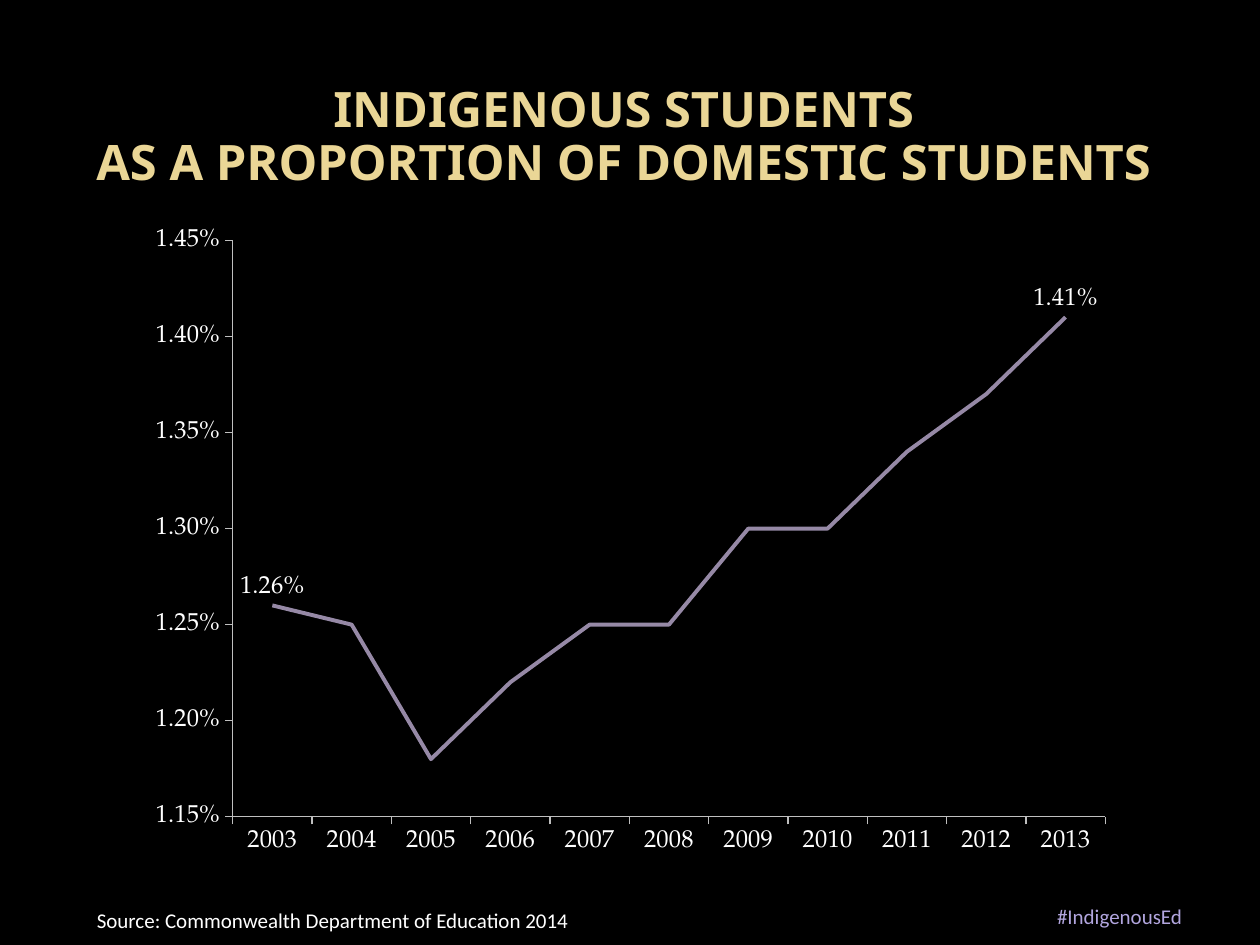
from dataclasses import dataclass

from lxml import etree
from pptx import Presentation
from pptx.chart.data import CategoryChartData
from pptx.dml.color import RGBColor
from pptx.enum.chart import XL_CHART_TYPE, XL_LABEL_POSITION, XL_TICK_MARK
from pptx.enum.text import MSO_ANCHOR, PP_ALIGN
from pptx.oxml.ns import qn
from pptx.util import Inches, Pt

LINE = XL_CHART_TYPE.LINE
ABOVE = XL_LABEL_POSITION.ABOVE
OUTSIDE = XL_TICK_MARK.OUTSIDE
TOP, MIDDLE = MSO_ANCHOR.TOP, MSO_ANCHOR.MIDDLE
LEFT, CENTER, RIGHT = PP_ALIGN.LEFT, PP_ALIGN.CENTER, PP_ALIGN.RIGHT


@dataclass(frozen=True)
class Theme:
    background: str = "000000"
    title: str = "EAD696"
    text: str = "FFFFFF"
    tag: str = "B2A6DF"
    series: str = "9689A6"
    axis: str = "BFBFBF"
    title_font: str = "Noto Sans"
    body_font: str = "Calibri"
    chart_font: str = "TeX Gyre Pagella"
    title_size: float = 27.9
    body_size: float = 12
    chart_size: float = 14


class SlideBuilder:
    def __init__(self, prs, theme):
        self.theme = theme
        self.s = prs.slides.add_slide(prs.slide_layouts[6])
        fill = self.s.background.fill
        fill.solid()
        fill.fore_color.rgb = RGBColor.from_string(theme.background)

    def set_font(self, font, name, size, color, bold=False):
        for key, value in {"name": name, "size": Pt(size), "bold": bold}.items():
            setattr(font, key, value)
        font.color.rgb = RGBColor.from_string(color)

    def text(self, box, lines, font, align=LEFT, anchor=TOP, spacing=1.0):
        tf = self.s.shapes.add_textbox(*map(Inches, box)).text_frame
        tf.word_wrap = True
        tf.vertical_anchor = anchor
        for i, line in enumerate(lines):
            p = tf.add_paragraph() if i else tf.paragraphs[0]
            p.alignment = align
            p.line_spacing = spacing
            r = p.add_run()
            r.text = line
            self.set_font(r.font, **font)
        return tf

    def line_chart(self, box, categories, values, scale, plot_area):
        t = self.theme
        data = CategoryChartData(number_format="0.00%")
        data.categories = categories
        data.add_series("Series 1", values)
        chart = self.s.shapes.add_chart(LINE, *map(Inches, box), data).chart
        chart.has_legend = False
        chart.has_title = False
        self.set_font(chart.font, t.chart_font, t.chart_size, t.text)

        for axis in (chart.category_axis, chart.value_axis):
            axis.has_major_gridlines = False
            axis.major_tick_mark = OUTSIDE
            axis.format.line.color.rgb = RGBColor.from_string(t.axis)
            axis.format.line.width = Pt(0.75)
            self.set_font(axis.tick_labels.font, t.chart_font, t.chart_size, t.text)
        for key, value in scale.items():
            setattr(chart.value_axis, key, value)
        chart.value_axis.tick_labels.number_format = "0.00%"
        chart.value_axis.tick_labels.number_format_is_linked = False

        plot = chart.plots[0]
        plot.vary_by_categories = False
        series = plot.series[0]
        series.smooth = False
        series.format.line.color.rgb = RGBColor.from_string(t.series)
        series.format.line.width = Pt(2.25)
        for i in (0, len(values) - 1):
            label = series.points[i].data_label
            label.position = ABOVE
            self.set_font(label.font, t.chart_font, t.chart_size, t.text)
        self.place_plot(plot_area, chart)

    def place_plot(self, plot_area, chart):
        area = chart.element.find(".//" + qn("c:plotArea"))
        layout = area.find(qn("c:layout"))
        if layout is None:
            layout = etree.Element(qn("c:layout"))
            area.insert(0, layout)
        manual = etree.SubElement(layout, qn("c:manualLayout"))
        settings = {"layoutTarget": "inner", "xMode": "edge", "yMode": "edge", **plot_area}
        for tag, value in settings.items():
            etree.SubElement(manual, qn("c:" + tag)).set("val", str(value))


def main():
    prs = Presentation()
    prs.slide_width, prs.slide_height = Inches(10), Inches(7.5)
    t = Theme()
    slide = SlideBuilder(prs, t)

    title_font = {"name": t.title_font, "size": t.title_size, "color": t.title, "bold": True}
    source_font = {"name": t.body_font, "size": t.body_size, "color": t.text}
    tag_font = {**source_font, "color": t.tag}

    slide.text(
        (0.45, 0.47, 9, 1.25),
        ["INDIGENOUS STUDENTS", "AS A PROPORTION OF DOMESTIC STUDENTS"],
        title_font, CENTER, MIDDLE, 0.9,
    )
    slide.line_chart(
        (1.06, 1.7, 7.87, 5.2),
        [str(year) for year in range(2003, 2014)],
        [0.0126, 0.0125, 0.0118, 0.0122, 0.0125, 0.0125,
         0.0130, 0.0130, 0.0134, 0.0137, 0.0141],
        {"minimum_scale": 0.0115, "maximum_scale": 0.0145, "major_unit": 0.0005},
        {"x": 0.1, "y": 0.04, "w": 0.88, "h": 0.88},
    )
    slide.text((0.67, 7.15, 9.33, 0.3),
               ["Source: Commonwealth Department of Education 2014"], source_font)
    slide.text((5.94, 7.12, 3.54, 0.3), ["#IndigenousEd"], tag_font, RIGHT, MIDDLE)
    prs.save("out.pptx")


if __name__ == "__main__":
    main()
